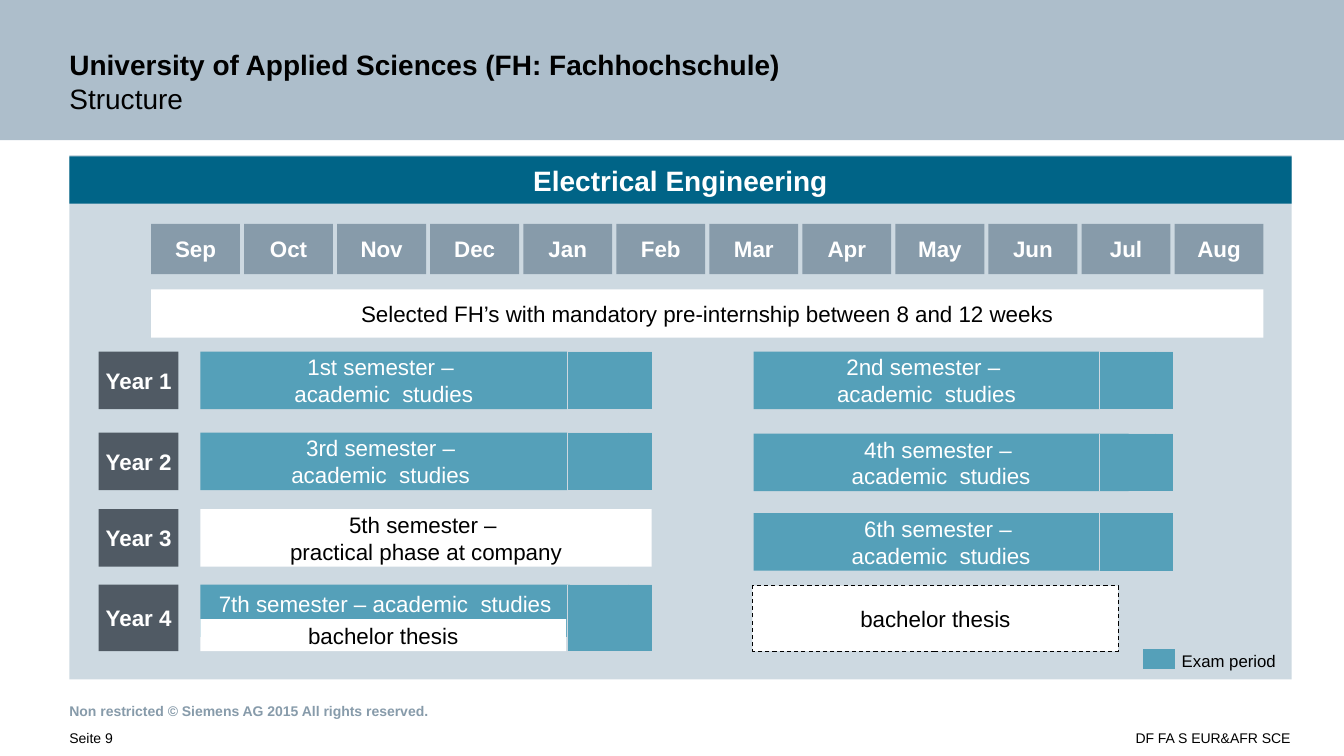
from copy import deepcopy
from dataclasses import dataclass

from pptx import Presentation
from pptx.dml.color import RGBColor
from pptx.enum.dml import MSO_LINE, MSO_PATTERN
from pptx.enum.shapes import MSO_SHAPE
from pptx.enum.text import MSO_ANCHOR, PP_ALIGN
from pptx.oxml.ns import qn
from pptx.shapes.autoshape import Shape
from pptx.slide import Slide
from pptx.util import Cm, Pt

WHITE, BLACK = "FFFFFF", "000000"
HEADER, PANEL, BANNER = "ADBECB", "CDD9E1", "006487"
MONTH, YEAR, STUDY, STRIPE = "879BAA", "505A64", "55A0B9", "CED8E0"

SLIDE_WIDTH, SLIDE_HEIGHT = 33.88, 19.05
MARGIN, PANEL_WIDTH = 1.75, 30.81
MONTHS_LEFT, MONTHS_WIDTH, MONTH_WIDTH = 3.81, 28.04, 2.24
MONTHS = ["Sep", "Oct", "Nov", "Dec", "Jan", "Feb",
          "Mar", "Apr", "May", "Jun", "Jul", "Aug"]
YEAR_LEFT, YEAR_WIDTH = 2.49, 2.01
WINTER, WINTER_EXAM, EXAM_WIDTH = 5.05, 14.3, 2.13
SUMMER, SUMMER_EXAM, SUMMER_EXAM_WIDTH = 19.0, 27.71, 1.86
ROW_HEIGHT, LAST_ROW_HEIGHT = 1.45, 1.68
ROW_TOPS = [8.86, 10.9, 12.83, 14.73]
ROW_HEIGHTS = [ROW_HEIGHT] * 3 + [LAST_ROW_HEIGHT]


@dataclass
class Block:
    left: float
    top: float
    width: float
    height: float
    text: str = ""
    fill: str = STUDY
    color: str = WHITE
    anchor: MSO_ANCHOR = MSO_ANCHOR.MIDDLE
    dashed: bool = False


@dataclass
class Exam:
    left: float
    top: float
    width: float = EXAM_WIDTH
    height: float = ROW_HEIGHT


SEMESTERS = [
    Block(WINTER, ROW_TOPS[0], 9.25, ROW_HEIGHT, "1st semester – \nacademic  studies"),
    Block(SUMMER, ROW_TOPS[0], 8.71, ROW_HEIGHT, "2nd semester – \nacademic  studies"),
    Block(WINTER, ROW_TOPS[1], 9.25, ROW_HEIGHT, "3rd semester – \nacademic  studies "),
    Block(SUMMER, 10.93, 9.45, ROW_HEIGHT, "4th semester – \nacademic  studies"),
    Block(WINTER, ROW_TOPS[2], 11.38, ROW_HEIGHT,
          "5th semester – \npractical phase at company", WHITE, BLACK),
    Block(SUMMER, 12.93, 9.45, ROW_HEIGHT, "6th semester – \nacademic  studies"),
    Block(WINTER, ROW_TOPS[3], 9.32, 1.32, "7th semester – academic  studies",
          anchor=MSO_ANCHOR.TOP),
    Block(WINTER, 15.6, 9.22, 0.81, "bachelor thesis", WHITE, BLACK),
    Block(18.97, 14.76, 9.22, 1.65, "bachelor thesis", WHITE, BLACK, dashed=True),
]

EXAMS = [
    Exam(WINTER_EXAM, ROW_TOPS[0]),
    Exam(SUMMER_EXAM, ROW_TOPS[0], SUMMER_EXAM_WIDTH),
    Exam(WINTER_EXAM, ROW_TOPS[1]),
    Exam(SUMMER_EXAM, 10.93, SUMMER_EXAM_WIDTH),
    Exam(SUMMER_EXAM, 12.93, SUMMER_EXAM_WIDTH),
    Exam(WINTER_EXAM, ROW_TOPS[3], height=LAST_ROW_HEIGHT),
    Exam(28.8, 16.36, 0.81, 0.51),
]


def rgb(color: str) -> RGBColor:
    return RGBColor.from_string(color)


def write_text(shape: Shape, text: str, *, size: float = 16, color: str = BLACK,
               bold: bool = False, subtitle: str = "", wrap: bool = True,
               align: PP_ALIGN = PP_ALIGN.CENTER,
               anchor: MSO_ANCHOR = MSO_ANCHOR.MIDDLE, line_spacing: float = 1.0,
               insets: tuple[float, float, float, float] = (0, 0, 0, 0)) -> None:
    frame = shape.text_frame
    frame.word_wrap = wrap
    frame.vertical_anchor = anchor
    frame.margin_left, frame.margin_top, frame.margin_right, frame.margin_bottom = map(Cm, insets)
    paragraph = frame.paragraphs[0]
    paragraph.alignment = align
    paragraph.line_spacing = line_spacing
    lines = [(line, bold) for line in text.split("\n")]
    if subtitle:
        lines.append((subtitle, False))
    for index, (line, is_bold) in enumerate(lines):
        if index:
            paragraph.add_line_break()
        run = paragraph.add_run()
        run.text = line
        run.font.name = "Arial"
        run.font.size = Pt(size)
        run.font.bold = is_bold
        run.font.color.rgb = rgb(color)
    for line_break in paragraph._p.findall(qn("a:br")):
        line_break.append(deepcopy(run._r.rPr))


def add_rectangle(slide: Slide, left: float, top: float, width: float,
                  height: float, fill: str) -> Shape:
    shape = slide.shapes.add_shape(MSO_SHAPE.RECTANGLE, Cm(left), Cm(top), Cm(width), Cm(height))
    shape.shadow.inherit = False
    shape.fill.solid()
    shape.fill.fore_color.rgb = rgb(fill)
    shape.line.fill.background()
    return shape


def add_label(slide: Slide, left: float, top: float, width: float, height: float) -> Shape:
    return slide.shapes.add_textbox(Cm(left), Cm(top), Cm(width), Cm(height))


def add_block(slide: Slide, block: Block) -> None:
    shape = add_rectangle(slide, block.left, block.top, block.width, block.height, block.fill)
    if block.dashed:
        shape.line.color.rgb = rgb(BLACK)
        shape.line.width = Pt(0.75)
        shape.line.dash_style = MSO_LINE.DASH
    write_text(shape, block.text, color=block.color, anchor=block.anchor, wrap=False,
               insets=(0.25, 0.13, 0.25, 0.13))


def add_exam(slide: Slide, exam: Exam) -> None:
    shape = add_rectangle(slide, exam.left, exam.top, exam.width, exam.height, STUDY)
    shape.fill.patterned()
    shape.fill.pattern = MSO_PATTERN.DARK_VERTICAL
    shape.fill.fore_color.rgb = rgb(STUDY)
    shape.fill.back_color.rgb = rgb(STRIPE)


def add_frame(slide: Slide) -> None:
    add_rectangle(slide, 0, 0, SLIDE_WIDTH, 3.53, HEADER)
    write_text(add_label(slide, 0, 0, SLIDE_WIDTH, 3.53),
               "University of Applied Sciences (FH: Fachhochschule)", subtitle="Structure",
               size=20, bold=True, align=PP_ALIGN.LEFT, anchor=MSO_ANCHOR.BOTTOM,
               insets=(MARGIN, 1.09, 5.89, 0.66))
    write_text(add_label(slide, 0, 17.12, SLIDE_WIDTH, 1.19),
               "Non restricted © Siemens AG 2015 All rights reserved.",
               size=10, color=MONTH, bold=True, align=PP_ALIGN.LEFT,
               insets=(MARGIN, 0.41, 8.92, 0))
    write_text(add_label(slide, 0, 18.34, 4.9, 0.71), "Seite 9", size=10,
               align=PP_ALIGN.LEFT, anchor=MSO_ANCHOR.TOP, line_spacing=1.1,
               insets=(MARGIN, 0, 0, 0.33))
    write_text(add_label(slide, 10.52, 18.34, 23.36, 0.71), "DF FA S EUR&AFR SCE", size=10,
               align=PP_ALIGN.RIGHT, anchor=MSO_ANCHOR.TOP, line_spacing=1.1,
               insets=(0, 0, 1.35, 0.33))
    add_rectangle(slide, MARGIN, 3.91, PANEL_WIDTH, 13.21, PANEL)
    banner = add_rectangle(slide, MARGIN, 3.94, PANEL_WIDTH, 1.19, BANNER)
    write_text(banner, "Electrical Engineering", size=20, color=WHITE, bold=True)


def add_calendar(slide: Slide) -> None:
    pitch = (MONTHS_WIDTH - MONTH_WIDTH) / (len(MONTHS) - 1)
    for index, month in enumerate(MONTHS):
        cell = add_rectangle(slide, MONTHS_LEFT + index * pitch, 5.64, MONTH_WIDTH, 1.27, MONTH)
        write_text(cell, month, color=WHITE, bold=True)
    add_block(slide, Block(MONTHS_LEFT, 7.29, MONTHS_WIDTH, 1.22,
                           "Selected FH’s with mandatory pre-internship between 8 and 12 weeks",
                           WHITE, BLACK))
    for number, (top, height) in enumerate(zip(ROW_TOPS, ROW_HEIGHTS), start=1):
        cell = add_rectangle(slide, YEAR_LEFT, top, YEAR_WIDTH, height, YEAR)
        write_text(cell, f"Year {number}", color=WHITE, bold=True)


def main() -> None:
    presentation = Presentation()
    presentation.slide_width = Cm(SLIDE_WIDTH)
    presentation.slide_height = Cm(SLIDE_HEIGHT)
    slide = presentation.slides.add_slide(presentation.slide_layouts[6])
    add_frame(slide)
    add_calendar(slide)
    for semester in SEMESTERS:
        add_block(slide, semester)
    for exam in EXAMS:
        add_exam(slide, exam)
    write_text(add_label(slide, 29.79, 16.36, 2.39, 0.56), "Exam period", size=12, wrap=False,
               align=PP_ALIGN.LEFT, anchor=MSO_ANCHOR.TOP, line_spacing=1.1)
    presentation.save("out.pptx")


if __name__ == "__main__":
    main()
